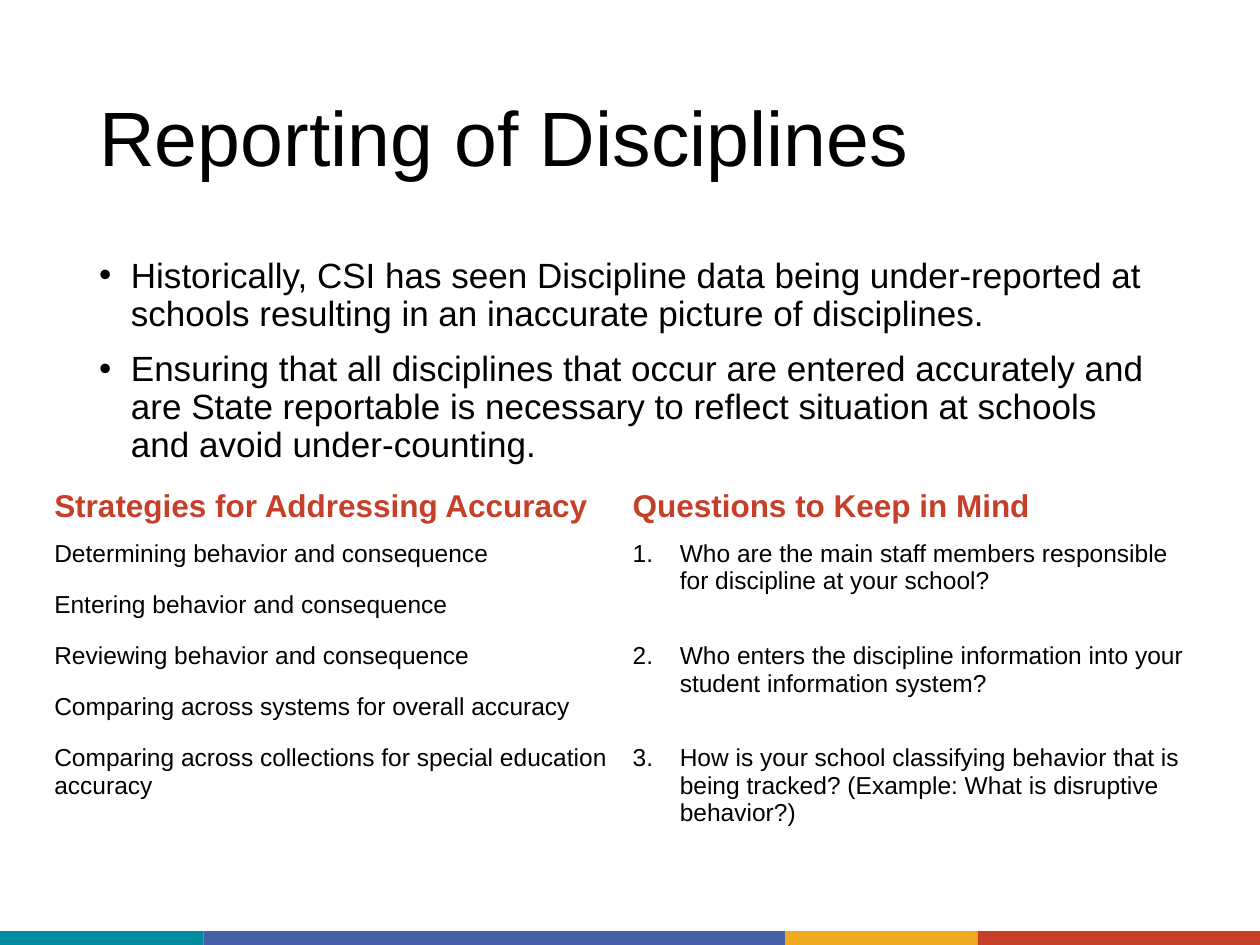
from lxml.etree import SubElement
from pptx import Presentation
from pptx.dml.color import RGBColor
from pptx.enum.shapes import MSO_SHAPE
from pptx.enum.text import MSO_ANCHOR, PP_ALIGN
from pptx.oxml.ns import qn
from pptx.util import Cm, Pt

TITLE = "Reporting of Disciplines"
POINTS = [
    "Historically, CSI has seen Discipline data being under-reported at schools "
    "resulting in an inaccurate picture of disciplines.",
    "Ensuring that all disciplines that occur are entered accurately and are State "
    "reportable is necessary to reflect situation at schools and avoid under-counting.",
]
HEADINGS = ["Strategies for Addressing Accuracy", "Questions to Keep in Mind"]
STRATEGIES = [
    "Determining behavior and consequence",
    "Entering behavior and consequence",
    "Reviewing behavior and consequence",
    "Comparing across systems for overall accuracy",
    "Comparing across collections for special education accuracy",
]
QUESTIONS = [
    "Who are the main staff members responsible for discipline at your school?",
    "Who enters the discipline information into your student information system?",
    "How is your school classifying behavior that is being tracked? "
    "(Example: What is disruptive behavior?)",
]
STRIPES = [("008CA0", 4.1), ("455FA9", 11.73), ("EFAA1F", 3.88), ("C63F28", 5.69)]
BLACK, RED = "000000", "C63F28"
SLIDE_WIDTH, SLIDE_HEIGHT = 25.4, 19.05
STRIPE_HEIGHT = 0.28
COLUMN_WIDTH, ROW_HEIGHT = 11.66, 1.03


def color(value):
    return RGBColor.from_string(value)


def style(paragraph, size, value=BLACK, bold=False):
    font = paragraph.font
    font.name, font.size, font.bold = "Arial", Pt(size), bold
    font.color.rgb = color(value)


def add_marker(paragraph, indent, tag, **attributes):
    properties = paragraph._p.get_or_add_pPr()
    properties.set("marL", str(Cm(indent)))
    properties.set("indent", str(-Cm(indent)))
    SubElement(properties, qn("a:buFont"), typeface="Arial")
    SubElement(properties, qn(tag), **attributes)


def add_stripes(slide):
    left = 0
    for value, width in STRIPES:
        stripe = slide.shapes.add_shape(
            MSO_SHAPE.RECTANGLE, Cm(left), Cm(SLIDE_HEIGHT - STRIPE_HEIGHT),
            Cm(width), Cm(STRIPE_HEIGHT))
        stripe.shadow.inherit = False
        stripe.fill.solid()
        stripe.fill.fore_color.rgb = color(value)
        stripe.line.fill.background()
        left += width


def add_title(slide):
    title = slide.shapes.title
    title.left, title.top, title.width, title.height = Cm(1.75), Cm(1.02), Cm(21.9), Cm(3.68)
    frame = title.text_frame
    frame.text = TITLE
    frame.vertical_anchor = MSO_ANCHOR.MIDDLE
    paragraph = frame.paragraphs[0]
    paragraph.alignment = PP_ALIGN.LEFT
    paragraph.line_spacing = 0.9
    style(paragraph, 44)


def add_points(slide):
    frame = slide.shapes.add_textbox(Cm(1.75), Cm(5.08), Cm(21.9), Cm(12.09)).text_frame
    frame.word_wrap = True
    for index, text in enumerate(POINTS):
        paragraph = frame.paragraphs[0] if index == 0 else frame.add_paragraph()
        paragraph.text = text
        paragraph.line_spacing = 0.9
        paragraph.space_before = Pt(10 if index else 0)
        add_marker(paragraph, 0.64, "a:buChar", char="•")
        style(paragraph, 20)


def add_strategy_table(slide):
    row_count = len(STRATEGIES) + 1
    table = slide.shapes.add_table(
        row_count, 2, Cm(0.84), Cm(9.73),
        Cm(2 * COLUMN_WIDTH), Cm(row_count * ROW_HEIGHT)).table
    table.first_row = table.horz_banding = False
    for column in table.columns:
        column.width = Cm(COLUMN_WIDTH)
    for row in table.rows:
        row.height = Cm(ROW_HEIGHT)
    for cell in table.iter_cells():
        cell.fill.background()

    def write(row, column, text, size, value=BLACK, bold=False, number=None):
        cell = table.cell(row, column)
        cell.text = text
        paragraph = cell.text_frame.paragraphs[0]
        if number:
            add_marker(paragraph, 0.95, "a:buAutoNum", type="arabicPeriod", startAt=str(number))
        style(paragraph, size, value, bold)

    for column, heading in enumerate(HEADINGS):
        write(0, column, heading, 18, RED, True)
    for row, strategy in enumerate(STRATEGIES, 1):
        write(row, 0, strategy, 14)
    for index, question in enumerate(QUESTIONS):
        row = 1 + 2 * index
        if row + 1 < row_count:
            table.cell(row, 1).merge(table.cell(row + 1, 1))
        write(row, 1, question, 14, number=index + 1)


def main():
    presentation = Presentation()
    presentation.slide_width, presentation.slide_height = Cm(SLIDE_WIDTH), Cm(SLIDE_HEIGHT)
    slide = presentation.slides.add_slide(presentation.slide_layouts[5])
    add_stripes(slide)
    add_title(slide)
    add_points(slide)
    add_strategy_table(slide)
    presentation.save("out.pptx")


if __name__ == "__main__":
    main()
